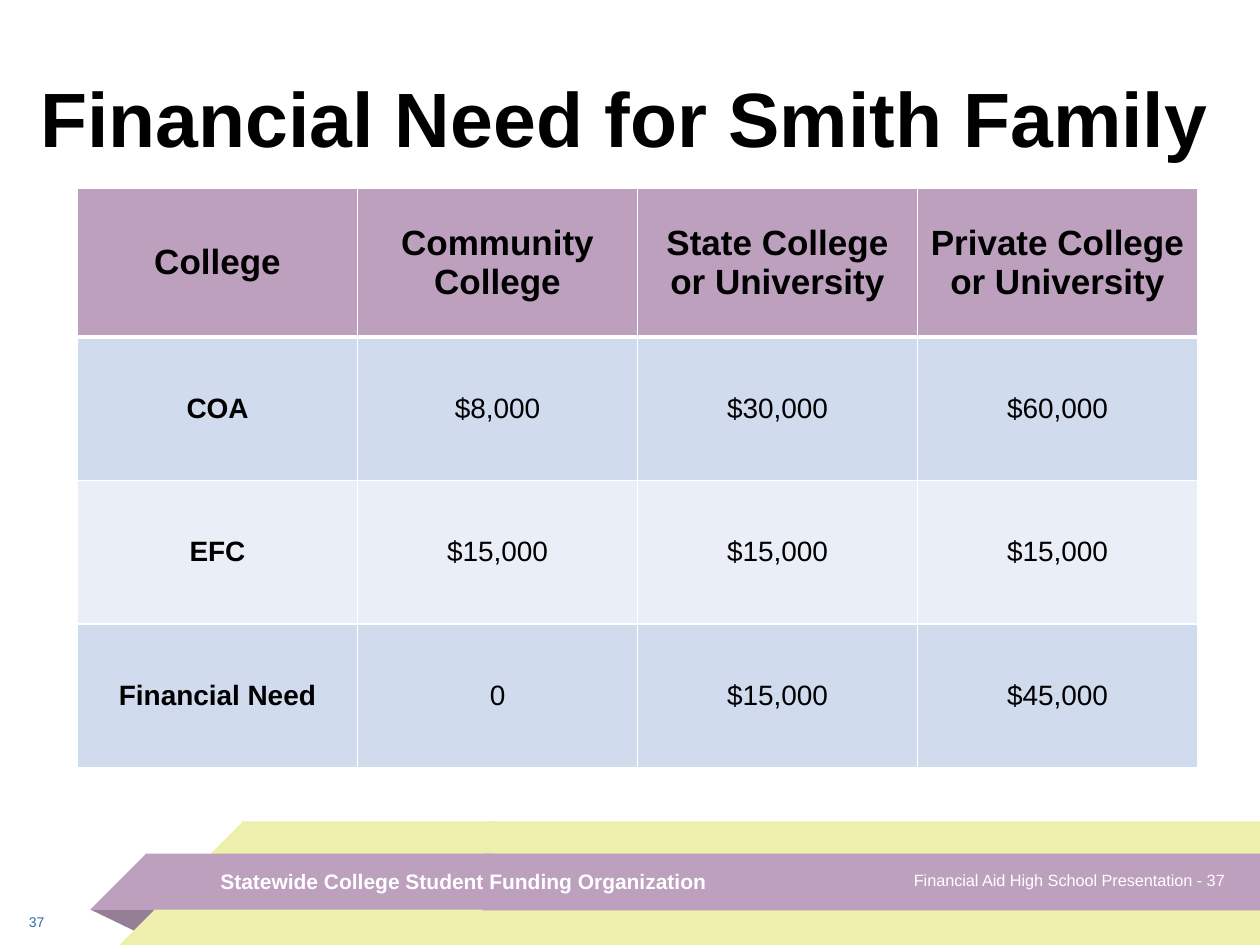
from pptx import Presentation
from pptx.util import Pt
from pptx.dml.color import RGBColor
from pptx.enum.shapes import MSO_SHAPE
from pptx.enum.text import MSO_ANCHOR, MSO_AUTO_SIZE, PP_ALIGN
from pptx.oxml.ns import qn
from lxml.etree import SubElement

BLACK = RGBColor(0x00, 0x00, 0x00)
WHITE = RGBColor(0xFF, 0xFF, 0xFF)
CREAM = RGBColor(0xEE, 0xEF, 0xAC)
MAUVE = RGBColor(0xBD, 0x9F, 0xBE)
PLUM = RGBColor(0x95, 0x7F, 0x97)
BLUE = RGBColor(0x2A, 0x6C, 0xAA)
BAND_A = RGBColor(0xD0, 0xDB, 0xEE)
BAND_B = RGBColor(0xE9, 0xEE, 0xF7)
FONT = "Arial"

ROWS = [
    ["College", "Community College", "State College or University",
     "Private College or University"],
    ["COA", "$8,000", "$30,000", "$60,000"],
    ["EFC", "$15,000", "$15,000", "$15,000"],
    ["Financial Need", "0", "$15,000", "$45,000"],
]


def put_text(frame, text, size, color=BLACK, bold=False, align=PP_ALIGN.LEFT):
    """Write one formatted paragraph, centred vertically."""
    frame.word_wrap = True
    frame.vertical_anchor = MSO_ANCHOR.MIDDLE
    para = frame.paragraphs[0]
    para.alignment = align
    run = para.add_run()
    run.text = text
    font = run.font
    font.name, font.size, font.bold = FONT, Pt(size), bold
    font.color.rgb = color


def add_label(slide, text, left, top, width, **style):
    box = slide.shapes.add_textbox(Pt(left), Pt(top), Pt(width), Pt(28.8))
    put_text(box.text_frame, text, **style)


def add_block(slide, kind, left, top, width, height, color):
    block = slide.shapes.add_shape(kind, Pt(left), Pt(top), Pt(width), Pt(height))
    block.shadow.inherit = False
    block.fill.solid()
    block.fill.fore_color.rgb = color
    block.line.fill.background()
    return block


def add_slope(slide, left, top, size, color):
    """Right triangle that rises to the right, the slanted end of a band."""
    slope = add_block(slide, MSO_SHAPE.RIGHT_TRIANGLE, left, top, size, size, color)
    slope._element.spPr.find(qn("a:xfrm")).set("flipH", "1")


def add_footer(slide):
    rect = MSO_SHAPE.RECTANGLE
    # Cream band, with the fold of the ribbon behind its slope
    add_block(slide, rect, 279.4, 469.4, 440.6, 70.6, CREAM)
    fold = add_block(slide, MSO_SHAPE.ISOSCELES_TRIANGLE, 51.4, 519.6, 41, 13.5, PLUM)
    fold.adjustments[0] = 0.32
    fold.rotation = 180
    add_block(slide, rect, 138.4, 469.4, 144, 70.6, CREAM)
    add_slope(slide, 68.2, 469.4, 70.6, CREAM)
    # Mauve ribbon
    add_block(slide, rect, 83, 487.8, 199.4, 32, MAUVE)
    add_slope(slide, 51.5, 487.8, 32, MAUVE)
    add_block(slide, rect, 275.8, 487.8, 444.2, 32.4, MAUVE)
    # Captions and page number
    add_label(slide, "Statewide College Student Funding Organization", 118.8, 489.2,
              311, size=12, color=WHITE, bold=True)
    add_label(slide, "Financial Aid High School Presentation - 37", 491, 488.6, 216,
              size=9.3, color=WHITE, align=PP_ALIGN.RIGHT)
    add_label(slide, "37", 9.4, 512.6, 32.4, size=8, color=BLUE)


def add_border(cell, side, width):
    line = SubElement(cell._tc.get_or_add_tcPr(), qn(f"a:ln{side}"),
                      w=str(Pt(width)))
    fill = SubElement(line, qn("a:solidFill"))
    SubElement(fill, qn("a:srgbClr"), val=str(WHITE))


def add_grid(slide):
    grid = slide.shapes.add_table(len(ROWS), len(ROWS[0]), Pt(44.3), Pt(107.6),
                                  Pt(640), Pt(331)).table
    for col in grid.columns:
        col.width = Pt(160)
    for i, row in enumerate(ROWS):
        head = i == 0
        grid.rows[i].height = Pt(85 if head else 82)
        for j, text in enumerate(row):
            cell = grid.cell(i, j)
            put_text(cell.text_frame, text, size=20 if head else 16,
                     bold=head or j == 0, align=PP_ALIGN.CENTER)
            cell.vertical_anchor = MSO_ANCHOR.MIDDLE
            # Borders come before the fill; the header has a thick rule below
            for side in "LRTB":
                thick = (i, side) in ((0, "B"), (1, "T"))
                add_border(cell, side, 3 if thick else 1)
            cell.fill.solid()
            cell.fill.fore_color.rgb = MAUVE if head else BAND_A if i % 2 else BAND_B


def add_title(slide):
    title = slide.shapes.title
    title.left, title.top = Pt(0), Pt(21.6)
    title.width, title.height = Pt(726.5), Pt(90)
    title.text_frame.auto_size = MSO_AUTO_SIZE.NONE
    put_text(title.text_frame, "Financial Need for Smith Family ", size=44,
             bold=True, align=PP_ALIGN.CENTER)


def main():
    deck = Presentation()
    deck.slide_width, deck.slide_height = Pt(720), Pt(540)
    slide = deck.slides.add_slide(deck.slide_layouts[5])
    add_footer(slide)
    add_title(slide)
    add_grid(slide)
    deck.save("out.pptx")


if __name__ == "__main__":
    main()
